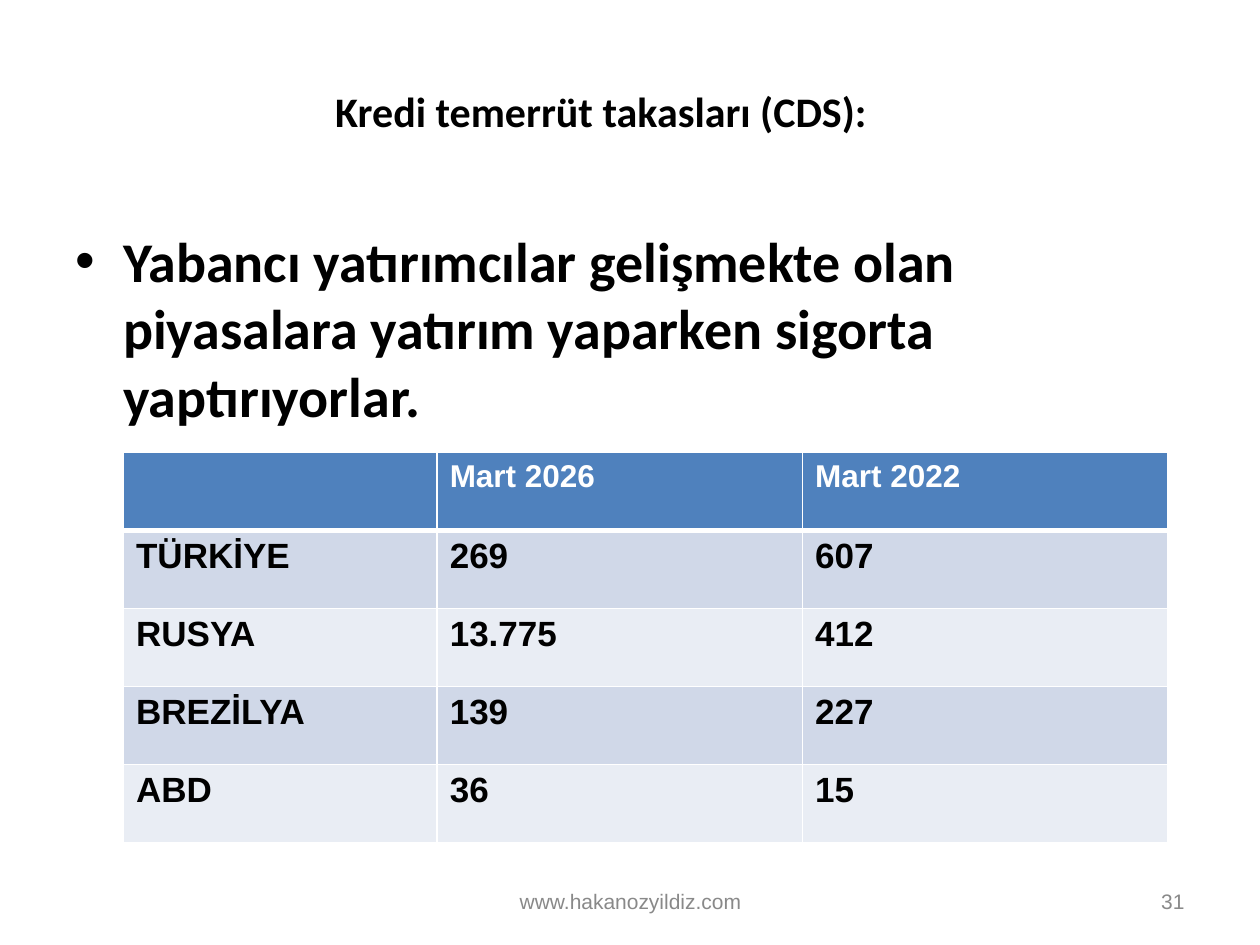
from lxml import etree
from pptx import Presentation
from pptx.dml.color import RGBColor
from pptx.enum.text import MSO_ANCHOR, PP_ALIGN
from pptx.oxml.ns import qn
from pptx.util import Inches, Pt

COLORS = {
    "black": "000000", "white": "FFFFFF", "grey": "898989",
    "header": "4F81BD", "odd": "D0D8E8", "even": "E9EDF4",
}
TITLE = "Kredi temerrüt takasları (CDS):"
BODY = ("Yabancı yatırımcılar gelişmekte olan piyasalara yatırım "
        "yaparken sigorta yaptırıyorlar.")
FOOTER = "www.hakanozyildiz.com"
PAGE = "31"
CDS_ROWS = [
    ("", "Mart 2026", "Mart 2022"),
    ("TÜRKİYE", "269", "607"),
    ("RUSYA", "13.775", "412"),
    ("BREZİLYA", "139", "227"),
    ("ABD", "36", "15"),
]
COL_WIDTHS = (2.49, 2.9, 2.9)
ROW_HEIGHT = 0.62


def style(p, size, color, font, bold=False):
    for r in p.runs:
        r.font.size, r.font.name, r.font.bold = Pt(size), font, bold
        r.font.color.rgb = RGBColor.from_string(COLORS[color])


def add_text(slide, box, words, size, color, font, bold=False,
             align=PP_ALIGN.LEFT, anchor=MSO_ANCHOR.MIDDLE):
    tf = slide.shapes.add_textbox(*map(Inches, box)).text_frame
    tf.word_wrap = True
    tf.vertical_anchor = anchor
    p = tf.paragraphs[0]
    p.text = words
    p.alignment = align
    style(p, size, color, font, bold)
    return p


def add_bullet(p, indent):
    pPr = p._p.get_or_add_pPr()
    pPr.set("marL", str(Inches(indent)))
    pPr.set("indent", str(-Inches(indent)))
    etree.SubElement(pPr, qn("a:buFont"), typeface="Arial")
    etree.SubElement(pPr, qn("a:buChar"), char="•")


def set_borders(cell, widths):
    """Draw white borders; widths maps each side (L, R, T, B) to points."""
    tcPr = cell._tc.get_or_add_tcPr()
    for side, width in widths.items():
        ln = etree.SubElement(tcPr, qn(f"a:ln{side}"), w=str(Pt(width)))
        fill = etree.SubElement(ln, qn("a:solidFill"))
        etree.SubElement(fill, qn("a:srgbClr"), val=COLORS["white"])


def add_cds_table(slide, left, top):
    size = sum(COL_WIDTHS), ROW_HEIGHT * len(CDS_ROWS)
    table = slide.shapes.add_table(len(CDS_ROWS), len(COL_WIDTHS),
                                   *map(Inches, (left, top, *size))).table
    for col, width in zip(table.columns, COL_WIDTHS):
        col.width = Inches(width)
    for i, row in enumerate(CDS_ROWS):
        table.rows[i].height = Inches(ROW_HEIGHT)
        band = "header" if i == 0 else "odd" if i % 2 else "even"
        for j, words in enumerate(row):
            cell = table.cell(i, j)
            set_borders(cell, {"L": 1, "R": 1, "T": 3 if i == 1 else 1,
                               "B": 3 if i == 0 else 1})
            cell.fill.solid()
            cell.fill.fore_color.rgb = RGBColor.from_string(COLORS[band])
            cell.text_frame.text = words
            style(cell.text_frame.paragraphs[0], 20 if i else 18,
                  "black" if i else "white", "Arial", True)


def main():
    prs = Presentation()
    prs.slide_width, prs.slide_height = Inches(10), Inches(7.5)
    s = prs.slides.add_slide(prs.slide_layouts[6])
    add_text(s, (0.27, 0.25, 9, 1.25), TITLE, 24, "black", "Calibri", True,
             align=PP_ALIGN.CENTER)
    body = add_text(s, (0.5, 1.75, 9, 4.95), BODY, 32, "black", "Calibri",
                    True, anchor=MSO_ANCHOR.TOP)
    add_bullet(body, 0.38)
    add_text(s, (3.42, 6.95, 3.17, 0.4), FOOTER, 12, "grey", "Arial",
             align=PP_ALIGN.CENTER)
    add_text(s, (7.17, 6.95, 2.33, 0.4), PAGE, 12, "grey", "Arial",
             align=PP_ALIGN.RIGHT)
    add_cds_table(s, 0.98, 3.59)
    prs.save("out.pptx")


if __name__ == "__main__":
    main()
